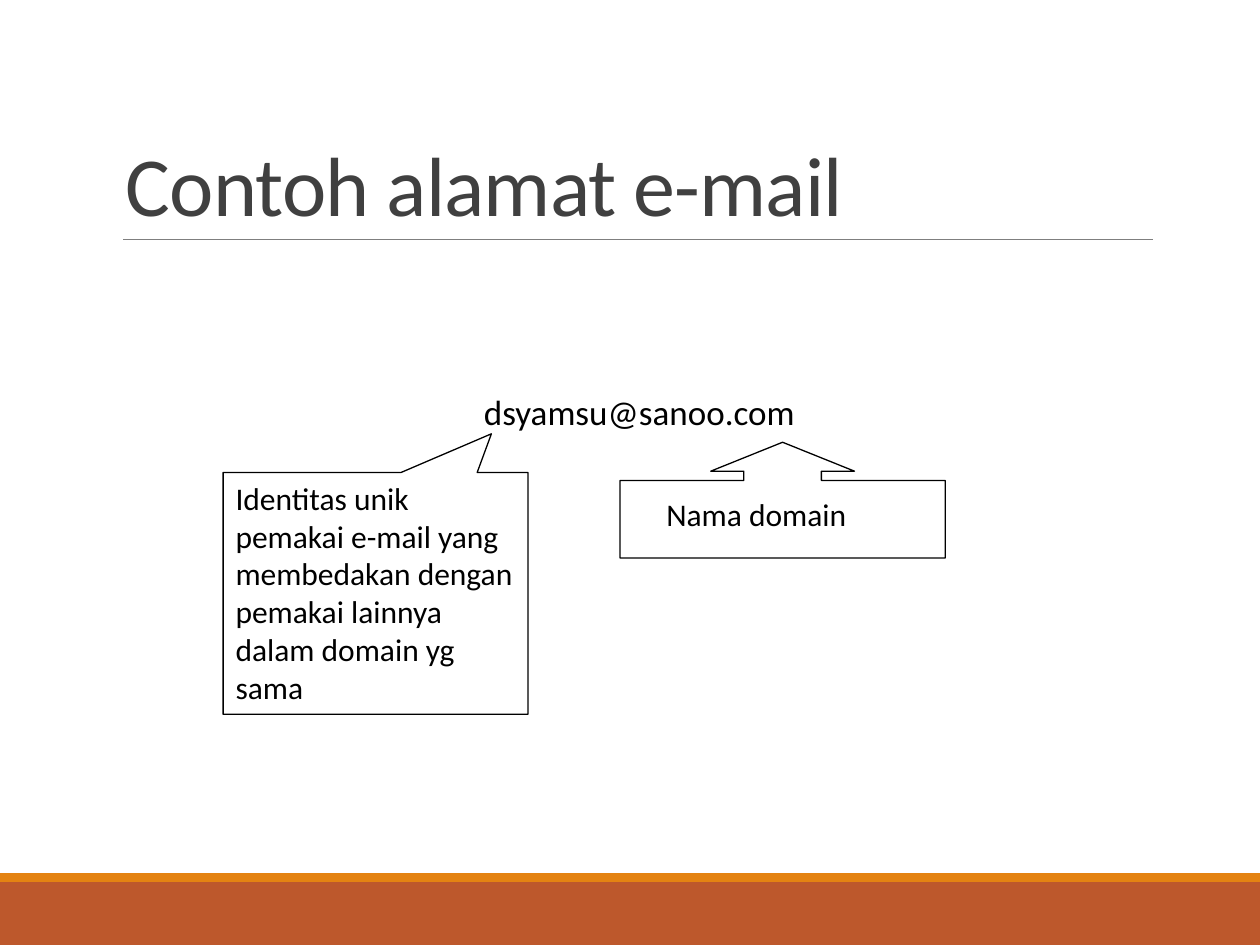
from pptx import Presentation
from pptx.dml.color import RGBColor
from pptx.enum.shapes import MSO_CONNECTOR, MSO_SHAPE
from pptx.enum.text import MSO_ANCHOR, PP_ALIGN
from pptx.oxml.ns import qn
from pptx.util import Pt
from lxml import etree

RECTANGLE = MSO_SHAPE.RECTANGLE
UP_ARROW_CALLOUT = MSO_SHAPE.UP_ARROW_CALLOUT
WEDGE_CALLOUT = MSO_SHAPE.RECTANGULAR_CALLOUT
STRAIGHT = MSO_CONNECTOR.STRAIGHT
TOP, BOTTOM = MSO_ANCHOR.TOP, MSO_ANCHOR.BOTTOM
LEFT, CENTER = PP_ALIGN.LEFT, PP_ALIGN.CENTER

RUST = RGBColor(0xBD, 0x58, 0x2C)
ORANGE = RGBColor(0xE4, 0x83, 0x12)
GRAY = RGBColor(0x7F, 0x7F, 0x7F)
CHARCOAL = RGBColor(0x40, 0x40, 0x40)
BLACK = RGBColor(0, 0, 0)

PAGE_WIDTH, PAGE_HEIGHT = 720, 540
FONT = "Calibri"


def add_text(page, box, text, size, color=BLACK, align=LEFT, anchor=TOP, spacing=1.0):
    frame = page.shapes.add_textbox(*map(Pt, box)).text_frame
    frame.word_wrap = True
    frame.vertical_anchor = anchor
    para = frame.paragraphs[0]
    para.alignment = align
    para.line_spacing = spacing
    span = para.add_run()
    span.text = text
    span.font.name = FONT
    span.font.size = Pt(size)
    span.font.color.rgb = color
    return span


def add_band(page, box, color):
    band = page.shapes.add_shape(RECTANGLE, *map(Pt, box))
    band.shadow.inherit = False
    band.fill.solid()
    band.fill.fore_color.rgb = color
    band.line.fill.background()


def add_footer(page, box):
    left, top, width, height = box
    stripe = 5
    add_band(page, (left, top + stripe, width, height - stripe), RUST)
    add_band(page, (left, top, width, stripe), ORANGE)


def add_title(page, box, text):
    left, top, width, height = box
    bottom = top + height
    rule = page.shapes.add_connector(
        STRAIGHT, Pt(left + 5.6), Pt(bottom), Pt(left + width), Pt(bottom))
    rule.line.color.rgb = GRAY
    rule.line.width = Pt(0.5)
    etree.SubElement(rule.element.spPr, qn("a:effectLst"))
    span = add_text(page, box, text, 48, CHARCOAL, anchor=BOTTOM, spacing=0.85)
    span.font._element.set("spc", "-50")


def add_callout(page, box, kind, adjustments, text, text_box, rotation=0):
    callout = page.shapes.add_shape(kind, *map(Pt, box))
    callout.shadow.inherit = False
    callout.rotation = rotation
    for index, value in enumerate(adjustments):
        callout.adjustments[index] = value
    callout.fill.background()
    callout.line.color.rgb = BLACK
    callout.line.width = Pt(0.75)
    add_text(page, text_box, text, 18)


def add_address(page, box):
    left, top, width, height = box
    add_text(page, (left, top, width, 30), "dsyamsu@sanoo.com", 20,
             align=CENTER, spacing=0.9)
    add_callout(page, (left + 301, top + 30.2, 185.8, 66.2), UP_ARROW_CALLOUT,
                (0.67, 0.62, 0.25, 0.67), "Nama domain",
                (left + 320.4, top + 56.9, 149.8, 28.8))
    identity_box = (left + 74.2, top + 47.5, 174.2, height - 47.5)
    add_callout(page, identity_box, WEDGE_CALLOUT, (-0.38, 0.66),
                "Identitas unik pemakai e-mail yang membedakan dengan "
                "pemakai lainnya dalam domain yg sama",
                identity_box, rotation=180)


def main():
    deck = Presentation()
    deck.slide_width, deck.slide_height = Pt(PAGE_WIDTH), Pt(PAGE_HEIGHT)
    page = deck.slides.add_slide(deck.slide_layouts[6])
    add_footer(page, (0, 499, PAGE_WIDTH, 41))
    add_title(page, (64.8, 22.3, 594, 114.5), "Contoh alamat e-mail")
    add_address(page, (53.3, 222.5, 624.2, 185.7))
    deck.save("out.pptx")


if __name__ == "__main__":
    main()
